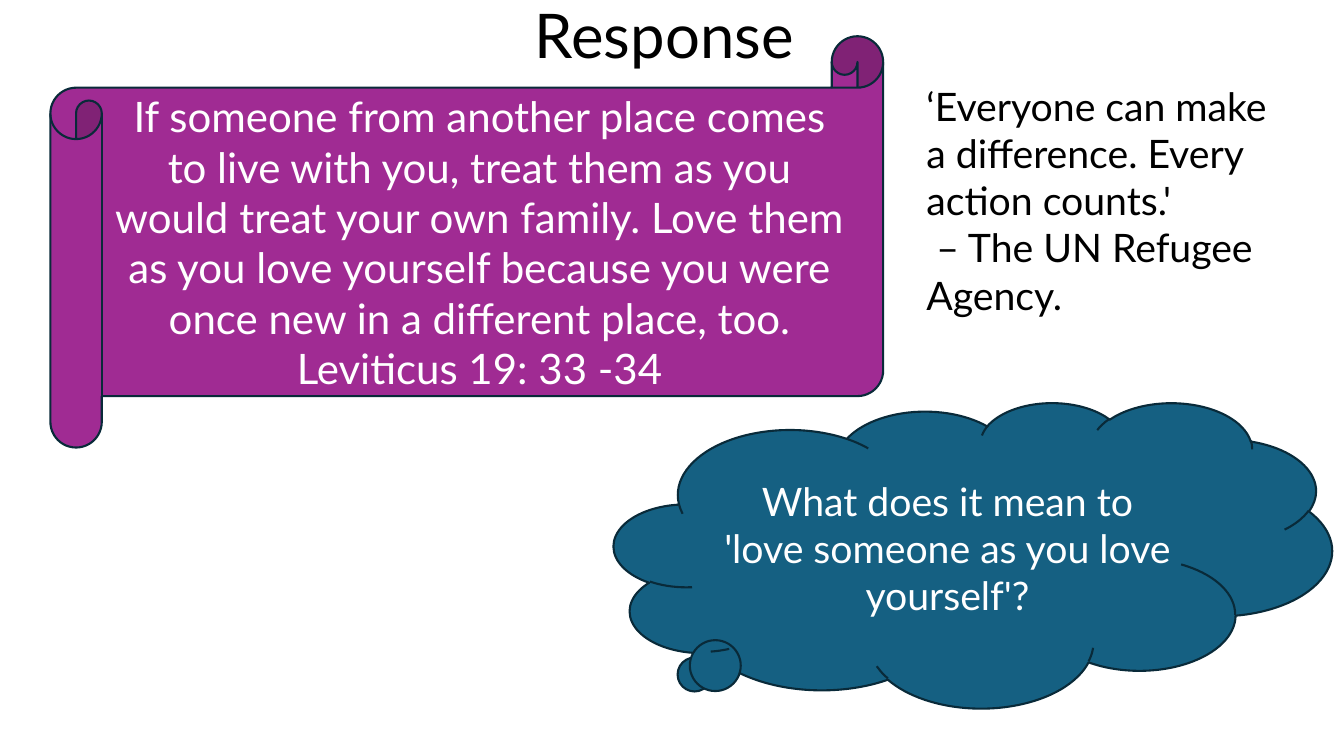
from pptx import Presentation
from pptx.dml.color import RGBColor
from pptx.enum import shapes, text
from pptx.util import Inches, Pt

BLACK = RGBColor(0x00, 0x00, 0x00)
WHITE = RGBColor(0xFF, 0xFF, 0xFF)
TEAL = RGBColor(0x15, 0x60, 0x82)
PURPLE = RGBColor(0xA0, 0x2B, 0x93)
OUTLINE = RGBColor(0x09, 0x2A, 0x39)
FONT = "Lato"


def write(tf, lines, size, color, align, anchor, spacing=None):
    tf.word_wrap = True
    tf.vertical_anchor = anchor
    for i, line in enumerate(lines):
        p = tf.paragraphs[0] if i == 0 else tf.add_paragraph()
        p.alignment = align
        if spacing:
            p.line_spacing = spacing
        r = p.add_run()
        r.text = line
        r.font.name = FONT
        r.font.size = Pt(size)
        r.font.color.rgb = color


def add_panel(s, kind, box, fill, lines, size):
    sp = s.shapes.add_shape(kind, *map(Inches, box))
    sp.shadow.inherit = False
    sp.fill.solid()
    sp.fill.fore_color.rgb = fill
    sp.line.color.rgb = OUTLINE
    sp.line.width = Pt(1.5)
    write(sp.text_frame, lines, size, WHITE,
          text.PP_ALIGN.CENTER, text.MSO_ANCHOR.MIDDLE)
    return sp


def add_title(s, box):
    sp = s.shapes.add_textbox(*map(Inches, box))
    write(sp.text_frame, ["Response"], 44, BLACK,
          text.PP_ALIGN.CENTER, text.MSO_ANCHOR.MIDDLE, 0.9)


def add_quote(s, box):
    sp = s.shapes.add_textbox(*map(Inches, box))
    write(sp.text_frame,
          ["‘Everyone can make a difference. Every action counts.'",
           " – The UN Refugee Agency."],
          28, BLACK, text.PP_ALIGN.LEFT, text.MSO_ANCHOR.TOP)


def add_question(s, box):
    sp = add_panel(s, shapes.MSO_SHAPE.CLOUD_CALLOUT, box, TEAL,
                   ["What does it mean to 'love someone as you love yourself'?"], 28)
    sp.adjustments[0] = -0.395
    sp.adjustments[1] = 0.399


def add_verse(s, box):
    add_panel(s, shapes.MSO_SHAPE.HORIZONTAL_SCROLL, box, PURPLE,
              ["If someone from another place comes to live with you, treat them "
               "as you would treat your own family. Love them as you love yourself "
               "because you were once new in a different place, too.",
               "Leviticus 19: 33 -34"], 30)


def main():
    prs = Presentation()
    prs.slide_width = Inches(13.33)
    prs.slide_height = Inches(7.5)
    s = prs.slides.add_slide(prs.slide_layouts[6])
    add_title(s, (0.84, 0, 11.5, 0.77))
    add_quote(s, (9.09, 0.77, 3.74, 2.46))
    add_question(s, (6.09, 3.99, 7.12, 3.03))
    add_verse(s, (0.5, 0.36, 8.26, 4.08))
    prs.save("out.pptx")


if __name__ == "__main__":
    main()
